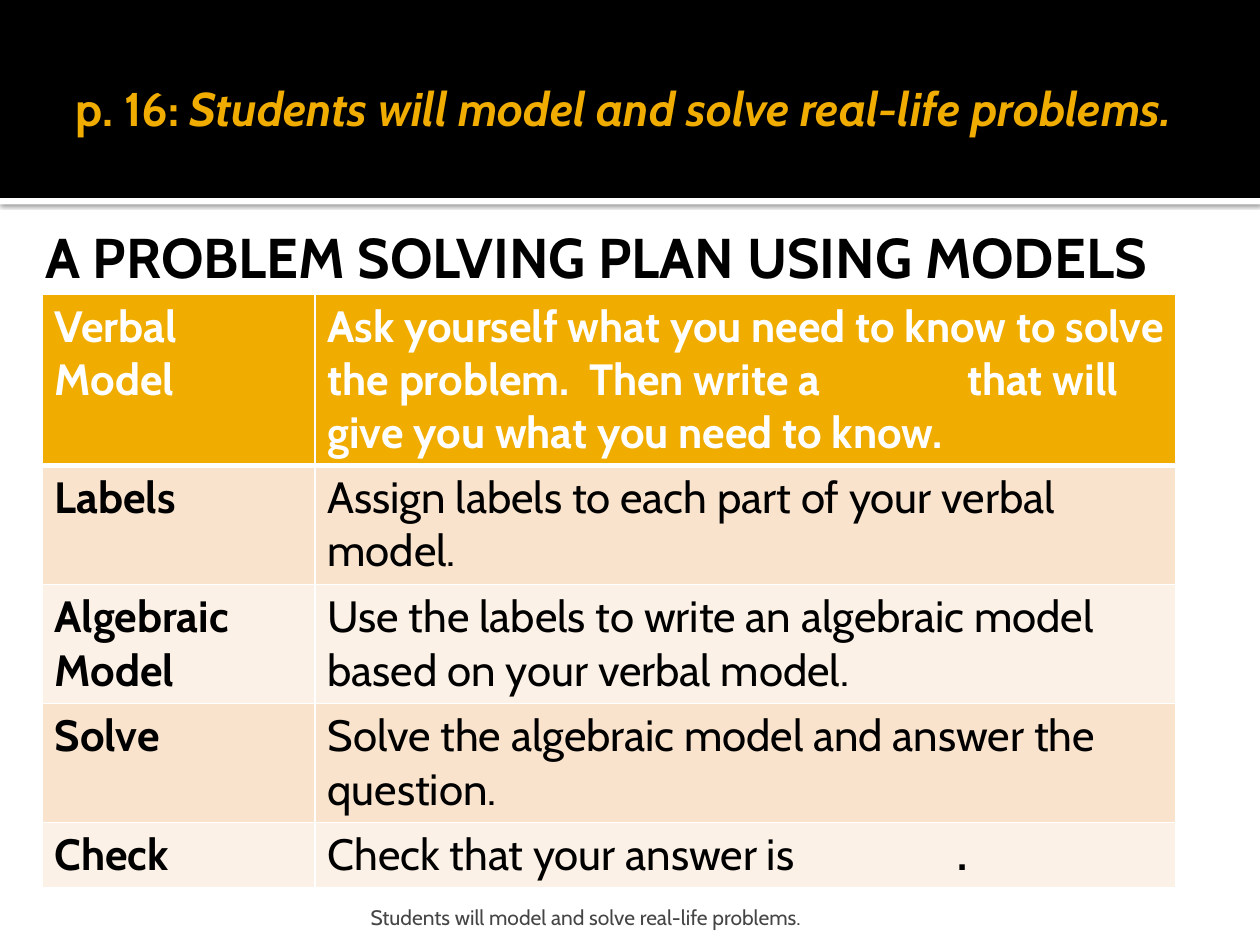
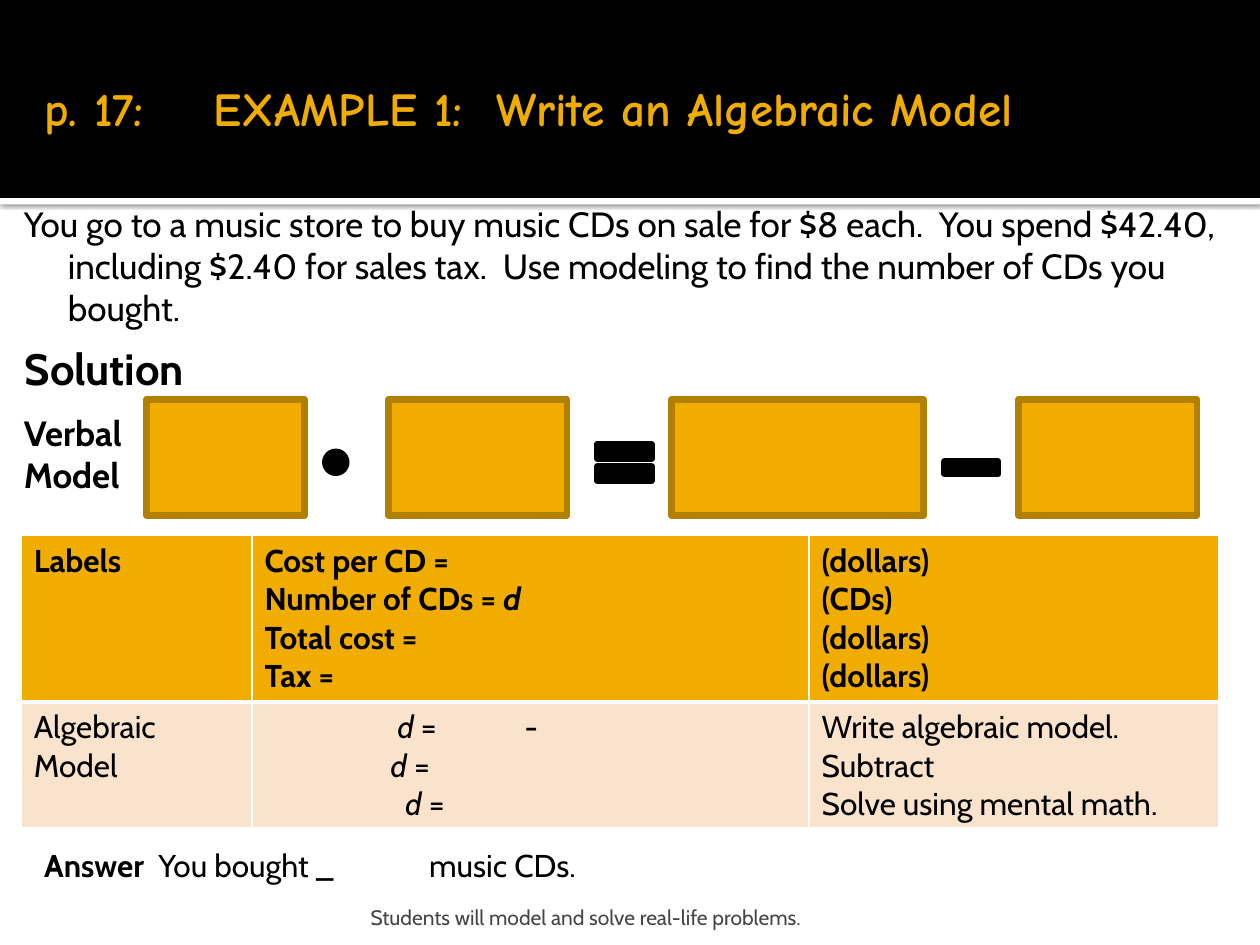
from collections import namedtuple
from dataclasses import dataclass

from lxml.etree import SubElement
from pptx import Presentation
from pptx.dml.color import RGBColor as RGB
from pptx.enum.shapes import MSO_SHAPE as Shape
from pptx.enum.text import MSO_ANCHOR as Anchor, MSO_AUTO_SIZE as AutoSize, PP_ALIGN as Align
from pptx.oxml.ns import qn
from pptx.util import Cm, Pt

Box = namedtuple("Box", "left top width height")
GOAL = "Students will model and solve real-life problems."


@dataclass(frozen=True)
class Theme:
    font: str = "Cabin"
    example_font: str = "Comic Neue"
    black: str = "000000"
    white: str = "FFFFFF"
    gold: str = "F0AD00"
    dark_gold: str = "B28000"
    band_dark: str = "F9E3CC"
    band_light: str = "FCF1E7"
    grey: str = "454545"
    heading: int = 32
    title: int = 27
    plan: int = 25
    body: int = 20
    label: int = 18
    footer: int = 12
    outline: float = 3.78
    rule: int = 1
    header_rule: int = 3


T = Theme()


def emu(box):
    return [Cm(v) for v in box]


def write(tf, lines, size, color=T.black, font=T.font, bold=False):
    for i, line in enumerate(lines):
        p = tf.paragraphs[0] if i == 0 else tf.add_paragraph()
        p.alignment = Align.LEFT
        parts = [(line, "")] if isinstance(line, str) else line
        for text, style in parts:
            r = p.add_run()
            r.text = text
            f = r.font
            f.name, f.size = font, Pt(size)
            f.bold, f.italic = bold or "b" in style, "i" in style
            f.color.rgb = RGB.from_string(color)


def set_insets(tf, left=0.25, top=0.13, right=0.25, bottom=0.13):
    tf.margin_left, tf.margin_top = Cm(left), Cm(top)
    tf.margin_right, tf.margin_bottom = Cm(right), Cm(bottom)


def set_hanging(p, margin=1.22, indent=-0.89):
    pPr = p._p.get_or_add_pPr()
    pPr.set("marL", str(Cm(margin)))
    pPr.set("indent", str(Cm(indent)))


def set_tabs(p, *stops):
    tabs = SubElement(p._p.get_or_add_pPr(), qn("a:tabLst"))
    for stop in stops:
        SubElement(tabs, qn("a:tab"), pos=str(Cm(stop)), algn="l")


def add_text(s, box, lines, size, **style):
    tf = s.shapes.add_textbox(*emu(box)).text_frame
    tf.word_wrap = True
    set_insets(tf)
    write(tf, lines, size, **style)
    return tf


def add_shape(s, kind, box, fill, line=None):
    sp = s.shapes.add_shape(kind, *emu(box))
    sp.shadow.inherit = False
    sp.fill.solid()
    sp.fill.fore_color.rgb = RGB.from_string(fill)
    if line:
        sp.line.color.rgb = RGB.from_string(line)
        sp.line.width = Pt(T.outline)
    else:
        sp.line.fill.background()
    return sp


def add_band(s, layout):
    strip = add_shape(s, Shape.RECTANGLE, Box(0, 3.99, 25.4, 0.13), T.white)
    effects = strip.element.spPr.find(qn("a:effectLst"))
    shadow = SubElement(effects, qn("a:outerShdw"), blurRad=str(Pt(2.5)),
                        dist=str(Pt(0.8)), dir="5400000", algn="tl", rotWithShape="0")
    color = SubElement(shadow, qn("a:srgbClr"), val=T.black)
    SubElement(color, qn("a:alpha"), val="60000")
    band = add_shape(s, Shape.RECTANGLE, Box(0, 0, 25.4, 3.99), T.black)
    for i, sp in enumerate((strip, band)):
        layout.shapes.element.insert(2 + i, sp.element)


def set_title(s, box, parts, font=T.font):
    sp = s.shapes.title
    sp.left, sp.top, sp.width, sp.height = emu(box)
    tf = sp.text_frame
    tf.word_wrap = True
    tf.auto_size = AutoSize.NONE
    tf.vertical_anchor = Anchor.MIDDLE
    set_insets(tf, right=0.13)
    write(tf, [parts], T.title, T.gold, font, bold=True)
    return tf.paragraphs[0]


def add_footer(s):
    tf = add_text(s, Box(7.34, 17.98, 15.29, 0.76), [GOAL], T.footer, color=T.grey)
    set_insets(tf, 0.13, 0.13, 0.13, 0)
    tf.vertical_anchor = Anchor.BOTTOM


def set_cell(cell, fill, bottom_rule):
    tcPr = cell._tc.get_or_add_tcPr()
    for side in "LRTB":
        width = bottom_rule if side == "B" else T.rule
        ln = SubElement(tcPr, qn(f"a:ln{side}"), w=str(Pt(width)))
        SubElement(SubElement(ln, qn("a:solidFill")), qn("a:srgbClr"), val=T.white)
    cell.fill.solid()
    cell.fill.fore_color.rgb = RGB.from_string(fill)


def add_table(s, box, col_widths, row_heights, rows, size, header_color, bold_labels):
    tbl = s.shapes.add_table(len(rows), len(col_widths), *emu(box)).table
    for col, width in zip(tbl.columns, col_widths):
        col.width = Cm(width)
    for row, height in zip(tbl.rows, row_heights):
        row.height = Cm(height)
    for i, row in enumerate(rows):
        header = i == 0
        fill = T.gold if header else (T.band_light, T.band_dark)[i % 2]
        for j, lines in enumerate(row):
            cell = tbl.cell(i, j)
            set_cell(cell, fill, T.header_rule if header else T.rule)
            write(cell.text_frame, lines, size, header_color if header else T.black,
                  bold=header or (bold_labels and j == 0))
    return tbl


def add_verbal_model(s, box):
    for dx, width in ((0, 3.18), (4.87, 3.6), (10.58, 5.08), (17.57, 3.6)):
        add_shape(s, Shape.RECTANGLE, Box(box.left + dx, box.top, width, box.height),
                  T.gold, T.dark_gold)
    for kind, dx, dy, width, height in (
        (Shape.OVAL, 3.6, 1.06, 0.42, 0.42),
        (Shape.MATH_EQUAL, 8.89, 0.64, 1.48, 1.27),
        (Shape.MATH_MINUS, 15.88, 0.85, 1.48, 1.06),
    ):
        add_shape(s, kind, Box(box.left + dx, box.top + dy, width, height),
                  T.black, T.black)


def build_plan_slide(s):
    set_title(s, Box(1.27, 0.43, 22.86, 3.48), [("p. 16: ", ""), (GOAL, "i")])
    tf = add_text(s, Box(0.43, 4.24, 24.13, 1.6),
                  ["A PROBLEM SOLVING PLAN USING MODELS"], T.heading, bold=True)
    set_insets(tf, 0.15, 0.25)
    set_hanging(tf.paragraphs[0])
    steps = [
        ("Verbal Model", "Ask yourself what you need to know to solve the problem.  "
         "Then write a \t\t\t that will give you what you need to know."),
        ("Labels", "Assign labels to each part of your verbal model."),
        ("Algebraic Model",
         "Use the labels to write an algebraic model based on your verbal model."),
        ("Solve", "Solve the algebraic model and answer the \t\t question."),
        ("Check", [("Check that your answer is \t\t\t", ""), (".", "b")]),
    ]
    add_table(s, Box(0.85, 5.93, 22.86, 11.97), (5.5, 17.36),
              (3.45, 2.4, 2.4, 2.4, 1.32), [([a], [b]) for a, b in steps],
              T.plan, T.white, bold_labels=True)
    add_footer(s)


def build_example_slide(s):
    p = set_title(s, Box(0.64, 0.43, 23.7, 3.48),
                  [("p. 17:\tEXAMPLE 1:  Write an Algebraic Model", "")], T.example_font)
    set_tabs(p, 3.41)
    tf = add_text(s, Box(0, 4.09, 24.97, 6.4), [
        "You go to a music store to buy music CDs on sale for $8 each.  You spend $42.40, "
        "including $2.40 for sales tax.  Use modeling to find the number of CDs you bought.",
        [("Verbal", "b")], [("Model", "b")]], T.body)
    set_insets(tf, 0.15, 0)
    for p in tf.paragraphs:
        set_hanging(p)
    tf.paragraphs[1].space_before = Pt(47)
    add_verbal_model(s, Box(2.96, 8.05, 21.17, 2.34))
    rows = [
        (["Labels"],
         ["Cost per CD =", [("Number of CDs = ", ""), ("d", "i")], "Total cost =", "Tax ="],
         ["(dollars)", "(CDs)", "(dollars)", "(dollars)"]),
        (["Algebraic Model"],
         [[("\t", ""), ("d", "i"), (end, "")] for end in (" =\t-", " =", " =")],
         ["Write algebraic model.", "Subtract", "Solve using mental math."]),
    ]
    tbl = add_table(s, Box(0.43, 10.8, 24.13, 5.9), (4.65, 11.23, 8.25), (3.35, 2.54),
                    rows, T.label, T.black, bold_labels=False)
    stops = ((2.68, 5.24), (2.54,), (2.84,))
    for p, tabs in zip(tbl.cell(1, 1).text_frame.paragraphs, stops):
        set_tabs(p, *tabs)
    tf = add_text(s, Box(0.64, 16.93, 24.33, 1.07),
                  [[("Answer", "b"), ("  You bought _\tmusic CDs.", "")]], T.label)
    set_tabs(tf.paragraphs[0], 7.76)
    add_text(s, Box(0.25, 6.77, 5.08, 1.32), ["Solution"], T.plan, bold=True)
    add_footer(s)


def main():
    prs = Presentation()
    prs.slide_width, prs.slide_height = Cm(25.4), Cm(19.05)
    layout = prs.slide_layouts[5]
    plan, example = (prs.slides.add_slide(layout) for _ in range(2))
    add_band(plan, layout)
    build_plan_slide(plan)
    build_example_slide(example)
    prs.save("out.pptx")


if __name__ == "__main__":
    main()
